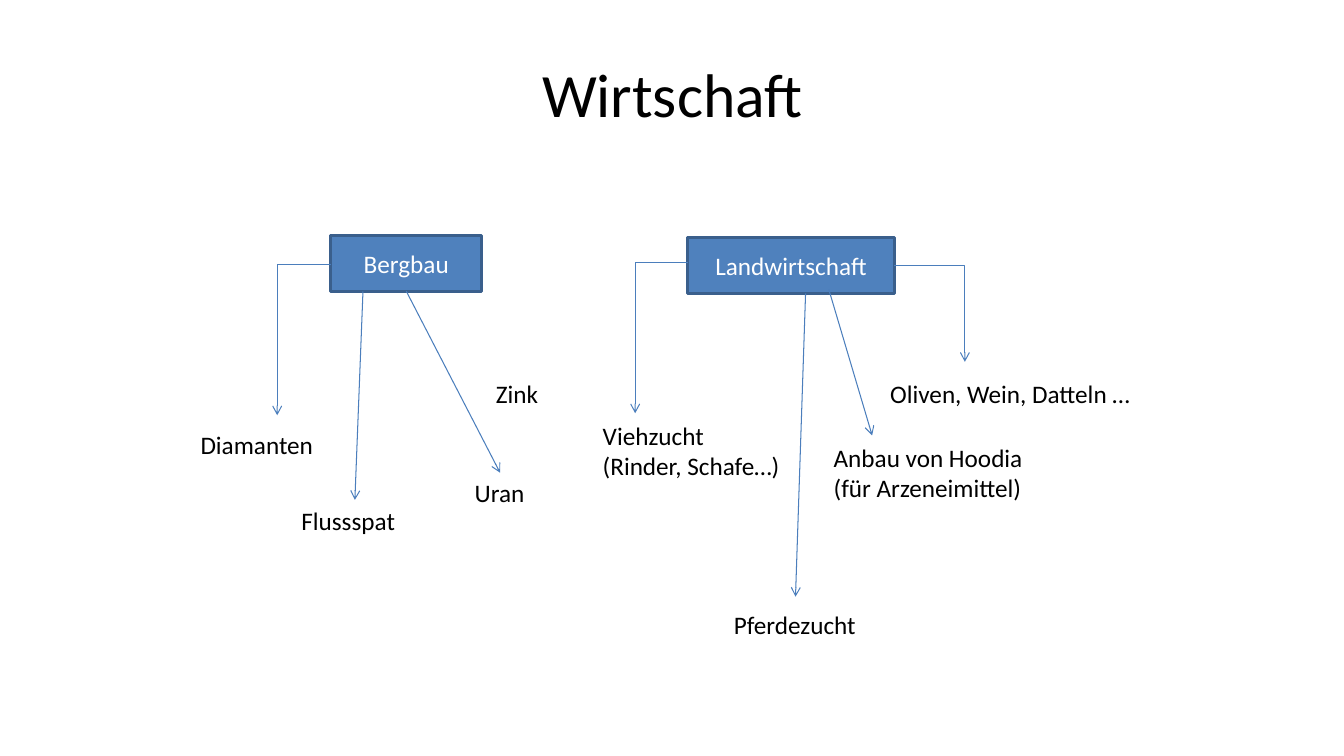
from pptx import Presentation
from pptx.dml.color import RGBColor
from pptx.enum import shapes, text
from pptx.oxml.ns import qn
from pptx.util import Inches, Pt

COLORS = {"box": "4F81BD", "border": "3A5F8C", "arrow": "4B7EBC",
          "text": "000000", "box text": "FFFFFF"}

deck = Presentation()
deck.slide_width, deck.slide_height = Inches(13.33), Inches(7.5)
page = deck.slides.add_slide(deck.slide_layouts[6])


def write(shape, words, size=18, color="text", centered=False):
    """Put one paragraph of words into the shape."""
    frame = shape.text_frame
    frame.word_wrap = True
    para = frame.paragraphs[0]
    para.text = words
    para.font.name = "Calibri"
    para.font.size = Pt(size)
    para.font.color.rgb = RGBColor.from_string(COLORS[color])
    if centered:
        para.alignment = text.PP_ALIGN.CENTER
        frame.vertical_anchor = text.MSO_ANCHOR.MIDDLE


def add_arrow(kind, start, end):
    arrow = page.shapes.add_connector(kind, *map(Inches, start + end))
    arrow.line.color.rgb = RGBColor.from_string(COLORS["arrow"])
    arrow.line.width = Pt(0.75)
    head = arrow.line._get_or_add_ln().makeelement(qn("a:tailEnd"), {"type": "arrow"})
    arrow.line._get_or_add_ln().append(head)
    properties = arrow._element.spPr
    properties.append(properties.makeelement(qn("a:effectLst"), {}))
    return arrow


title = page.shapes.add_textbox(Inches(0.67), Inches(0.3), Inches(12), Inches(1.25))
write(title, "Wirtschaft", size=44, centered=True)

sectors = {}
for name, left, top, width in [("Bergbau", 3.28, 2.34, 1.5),
                               ("Landwirtschaft", 6.82, 2.36, 2.05)]:
    box = page.shapes.add_shape(shapes.MSO_SHAPE.FLOWCHART_PROCESS, Inches(left),
                                Inches(top), Inches(width), Inches(0.55))
    box.shadow.inherit = False
    box.fill.solid()
    box.fill.fore_color.rgb = RGBColor.from_string(COLORS["box"])
    box.line.color.rgb = RGBColor.from_string(COLORS["border"])
    box.line.width = Pt(2)
    write(box, name, color="box text", centered=True)
    sectors[name] = box

products = [
    ("Diamanten", 1.89, 4.21, 1.42),
    ("Flussspat", 2.89, 4.96, 1.25),
    ("Uran", 4.61, 4.69, 0.71),
    ("Zink", 4.82, 3.7, 0.71),
    ("Viehzucht\n(Rinder, Schafe…)", 5.88, 4.12, 2.27),
    ("Anbau von Hoodia\n(für Arzeneimittel)", 8.17, 4.34, 2.22),
    ("Oliven, Wein, Datteln …", 8.73, 3.7, 2.68),
    ("Pferdezucht", 7.18, 6, 2.27),
]
for words, left, top, width in products:
    height = 0.71 if "\n" in words else 0.4
    label = page.shapes.add_textbox(Inches(left), Inches(top), Inches(width), Inches(height))
    write(label, words)

# Elbows leave a box sideways and turn down once
for start, end in [((3.28, 2.62), (2.75, 4.12)),
                   ((6.82, 2.6), (6.3, 4.1)),
                   ((8.87, 2.63), (9.57, 3.59))]:
    elbow = add_arrow(shapes.MSO_CONNECTOR.ELBOW, start, end)
    elbow._element.spPr.find(qn("a:prstGeom")).set("prst", "bentConnector2")

for start, end in [((3.6, 2.89), (3.52, 4.96)),
                   ((7.99, 2.91), (7.89, 5.92)),
                   ((8.22, 2.87), (8.65, 4.32))]:
    add_arrow(shapes.MSO_CONNECTOR.STRAIGHT, start, end)

uranium_arrow = add_arrow(shapes.MSO_CONNECTOR.STRAIGHT, (4.03, 2.89), (4.96, 4.69))
uranium_arrow.begin_connect(sectors["Bergbau"], 2)

deck.save("out.pptx")
